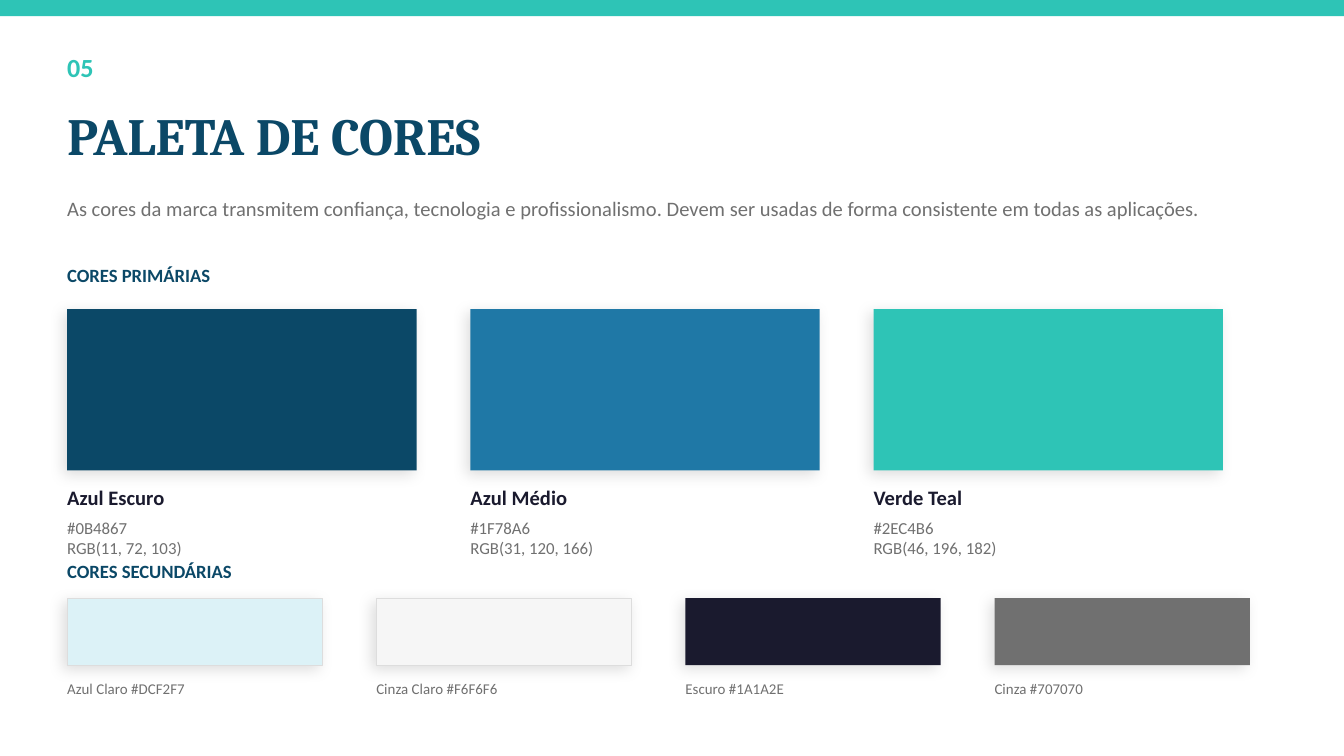
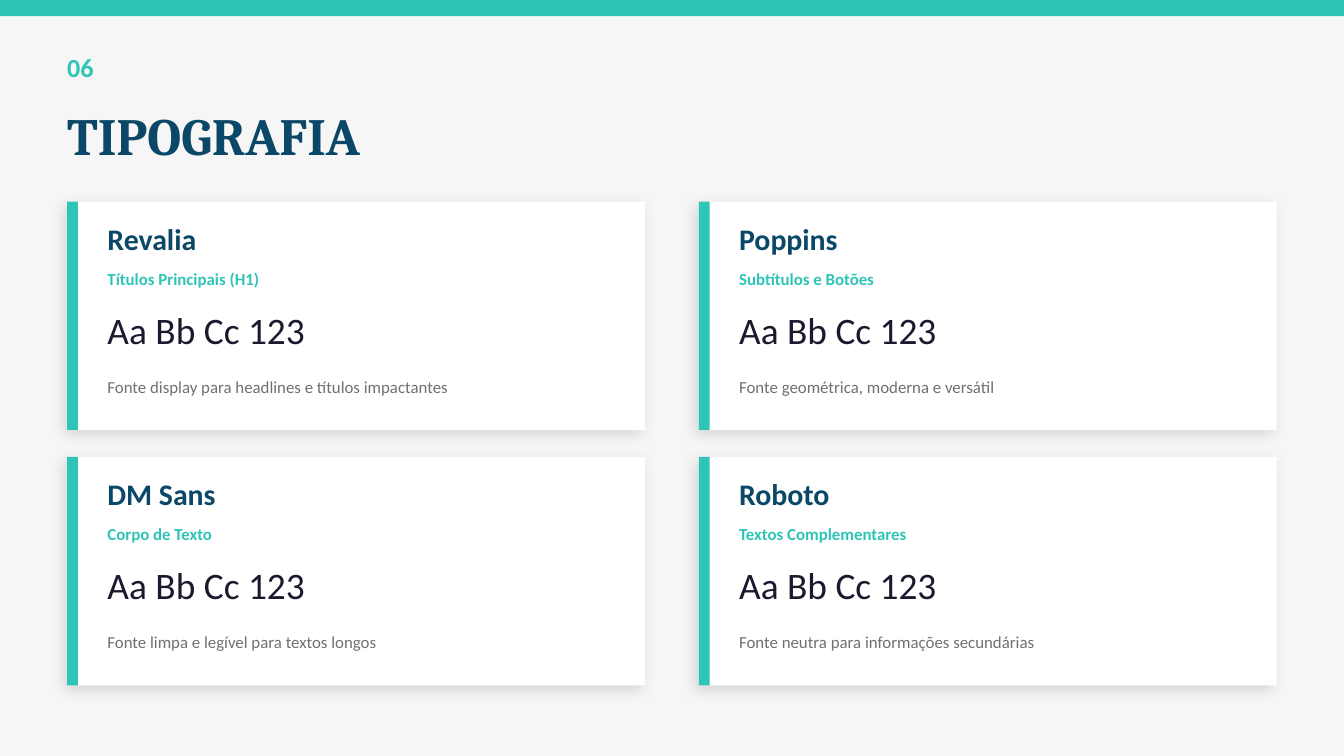
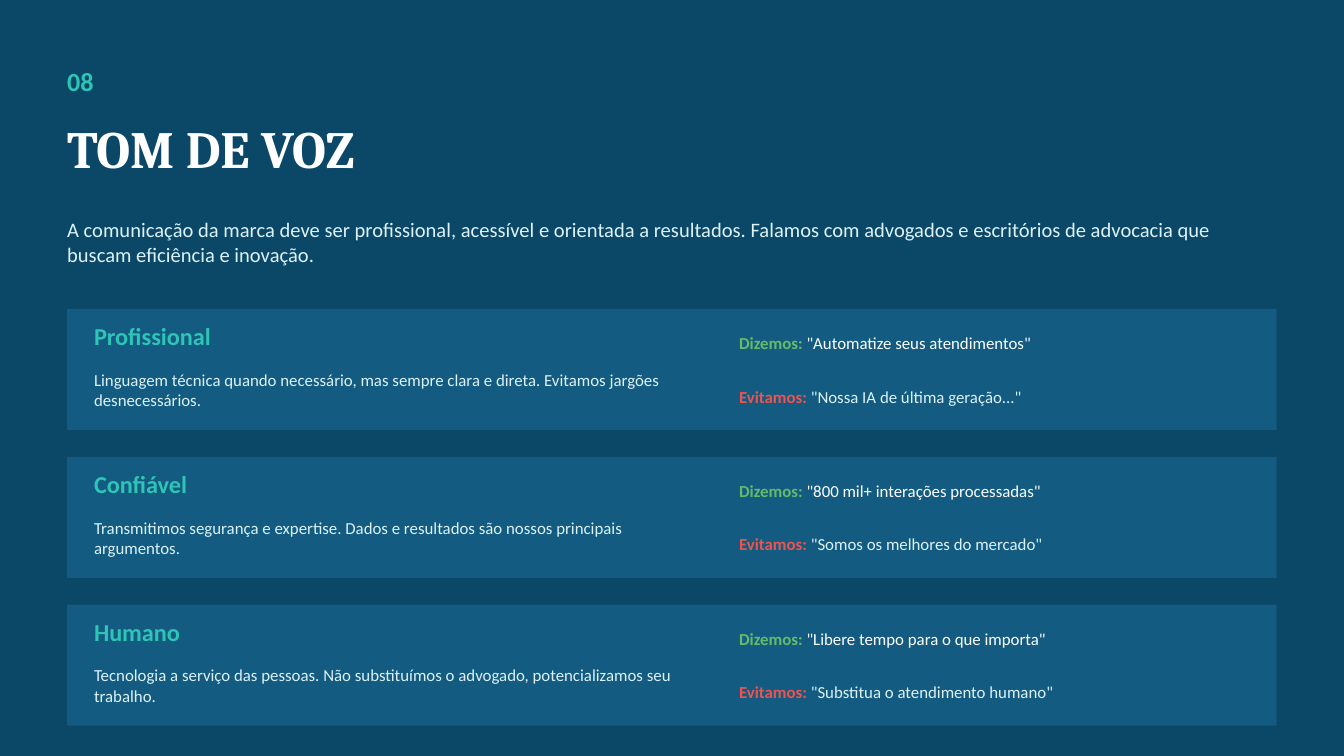
from dataclasses import dataclass, replace

from lxml.etree import SubElement
from pptx import Presentation
from pptx.dml.color import RGBColor
from pptx.enum.shapes import MSO_SHAPE
from pptx.enum.text import MSO_ANCHOR, MSO_AUTO_SIZE, PP_ALIGN
from pptx.oxml.ns import qn
from pptx.shapes.autoshape import Shape
from pptx.slide import Slide
from pptx.text.text import TextFrame, _Run
from pptx.util import Inches, Pt

DARK_BLUE = RGBColor(0x0B, 0x48, 0x67)
MEDIUM_BLUE = RGBColor(0x1F, 0x78, 0xA6)
TEAL = RGBColor(0x2E, 0xC4, 0xB6)
LIGHT_BLUE = RGBColor(0xDC, 0xF2, 0xF7)
LIGHT_GRAY = RGBColor(0xF6, 0xF6, 0xF6)
INK = RGBColor(0x1A, 0x1A, 0x2E)
GRAY = RGBColor(0x70, 0x70, 0x70)
WHITE = RGBColor(0xFF, 0xFF, 0xFF)
BORDER = RGBColor(0xDD, 0xDD, 0xDD)
GREEN = RGBColor(0x66, 0xBB, 0x6A)
RED = RGBColor(0xEF, 0x53, 0x50)

# The slide is 100 grid columns wide; rows are as high as columns are wide.
SLIDE_WIDTH = Inches(10)
SLIDE_HEIGHT = SLIDE_WIDTH * 9 // 16
GRID = SLIDE_WIDTH // 100
MARGIN = 5
CONTENT_WIDTH = 100 - 2 * MARGIN
TITLE_ONLY_LAYOUT = 5


@dataclass(frozen=True)
class Box:
    """A rectangle in grid columns and rows."""
    left: float
    top: float
    width: float
    height: float

    def lengths(self) -> tuple[int, ...]:
        return tuple(round(value * GRID)
                     for value in (self.left, self.top, self.width, self.height))


@dataclass(frozen=True)
class TextStyle:
    size: float
    color: RGBColor
    bold: bool = False
    font: str = "Calibri"


@dataclass(frozen=True)
class Swatch:
    name: str
    color: RGBColor
    border: RGBColor | None = None


@dataclass(frozen=True)
class Typeface:
    name: str
    role: str
    description: str


@dataclass(frozen=True)
class Voice:
    name: str
    description: str
    say: str
    avoid: str


NUMBER = TextStyle(14, TEAL, bold=True)
TITLE = TextStyle(28, DARK_BLUE, bold=True, font="Cambria")
INTRO = TextStyle(11, GRAY)
SECTION = TextStyle(10, DARK_BLUE, bold=True)
SWATCH_NAME = TextStyle(11, INK, bold=True)
DETAIL = TextStyle(9, GRAY)
CAPTION = TextStyle(8, GRAY)
TYPEFACE_NAME = TextStyle(16, DARK_BLUE, bold=True)
TYPEFACE_ROLE = TextStyle(9, TEAL, bold=True)
SAMPLE = TextStyle(20, INK)
VOICE_NAME = TextStyle(13, TEAL, bold=True)
VOICE_TEXT = TextStyle(9, LIGHT_BLUE)

PRIMARY = (
    Swatch("Azul Escuro", DARK_BLUE),
    Swatch("Azul Médio", MEDIUM_BLUE),
    Swatch("Verde Teal", TEAL),
)
SECONDARY = (
    Swatch("Azul Claro", LIGHT_BLUE, BORDER),
    Swatch("Cinza Claro", LIGHT_GRAY, BORDER),
    Swatch("Escuro", INK),
    Swatch("Cinza", GRAY),
)
TYPEFACES = (
    Typeface("Revalia", "Títulos Principais (H1)",
             "Fonte display para headlines e títulos impactantes"),
    Typeface("Poppins", "Subtítulos e Botões", "Fonte geométrica, moderna e versátil"),
    Typeface("DM Sans", "Corpo de Texto", "Fonte limpa e legível para textos longos"),
    Typeface("Roboto", "Textos Complementares",
             "Fonte neutra para informações secundárias"),
)
VOICES = (
    Voice("Profissional",
          "Linguagem técnica quando necessário, mas sempre clara e direta. "
          "Evitamos jargões desnecessários.",
          '"Automatize seus atendimentos"', '"Nossa IA de última geração..."'),
    Voice("Confiável",
          "Transmitimos segurança e expertise. "
          "Dados e resultados são nossos principais argumentos.",
          '"800 mil+ interações processadas"', '"Somos os melhores do mercado"'),
    Voice("Humano",
          "Tecnologia a serviço das pessoas. "
          "Não substituímos o advogado, potencializamos seu trabalho.",
          '"Libere tempo para o que importa"', '"Substitua o atendimento humano"'),
)


def format_run(run: _Run, style: TextStyle) -> None:
    run.font.name = style.font
    run.font.size = Pt(style.size)
    run.font.bold = style.bold
    run.font.color.rgb = style.color


def write(text_frame: TextFrame, text: str, style: TextStyle) -> None:
    text_frame.text = text
    text_frame.word_wrap = True
    text_frame.auto_size = MSO_AUTO_SIZE.NONE
    text_frame.vertical_anchor = MSO_ANCHOR.MIDDLE
    text_frame.margin_left = text_frame.margin_right = 0
    text_frame.margin_top = text_frame.margin_bottom = 0
    for paragraph in text_frame.paragraphs:
        paragraph.alignment = PP_ALIGN.LEFT
        for run in paragraph.runs:
            format_run(run, style)


def add_text(slide: Slide, box: Box, text: str, style: TextStyle) -> Shape:
    text_box = slide.shapes.add_textbox(*box.lengths())
    write(text_box.text_frame, text, style)
    return text_box


def add_labelled_quote(slide: Slide, box: Box, label: str, label_color: RGBColor,
                       quote: str, quote_color: RGBColor) -> None:
    style = replace(VOICE_TEXT, color=label_color, bold=True)
    text_box = add_text(slide, box, f"{label}: ", style)
    run = text_box.text_frame.paragraphs[0].add_run()
    run.text = quote
    format_run(run, replace(VOICE_TEXT, color=quote_color))


def add_rectangle(slide: Slide, box: Box, color: RGBColor,
                  border: RGBColor | None = None) -> Shape:
    shape = slide.shapes.add_shape(MSO_SHAPE.RECTANGLE, *box.lengths())
    shape.shadow.inherit = False
    shape.fill.solid()
    shape.fill.fore_color.rgb = color
    if border is None:
        shape.line.fill.background()
    else:
        shape.line.color.rgb = border
        shape.line.width = Pt(0.5)
    return shape


def add_alpha(color_element, percent: int) -> None:
    SubElement(color_element, qn("a:alpha"), val=str(percent * 1000))


def cast_shadow(shape: Shape) -> None:
    """Give the shape a soft shadow towards the lower left."""
    effects = shape._element.spPr.find(qn("a:effectLst"))
    shadow = SubElement(effects, qn("a:outerShdw"), blurRad=str(Pt(8)), dist=str(Pt(3)),
                        dir=str(135 * 60000), algn="bl", rotWithShape="0")
    add_alpha(SubElement(shadow, qn("a:srgbClr"), val="000000"), 12)


def add_titled_slide(presentation, number: str, title: str, background: RGBColor,
                     title_color: RGBColor = DARK_BLUE, top: float = 3,
                     band: bool = True) -> Slide:
    slide = presentation.slides.add_slide(presentation.slide_layouts[TITLE_ONLY_LAYOUT])
    slide.background.fill.solid()
    slide.background.fill.fore_color.rgb = background
    if band:
        add_rectangle(slide, Box(0, 0, 100, 1.2), TEAL)
    add_text(slide, Box(MARGIN, top, 15, 4), number, NUMBER)
    heading = slide.shapes.title
    heading.left, heading.top, heading.width, heading.height = Box(
        MARGIN, top + 4, 60, 6).lengths()
    write(heading.text_frame, title, replace(TITLE, color=title_color))
    return slide


def add_palette_slide(presentation) -> None:
    slide = add_titled_slide(presentation, "05", "PALETA DE CORES", WHITE)
    add_text(slide, Box(MARGIN, 13, CONTENT_WIDTH, 5),
             "As cores da marca transmitem confiança, tecnologia e profissionalismo. "
             "Devem ser usadas de forma consistente em todas as aplicações.", INTRO)
    gap = 4

    add_text(slide, Box(MARGIN, 19, 40, 3), "CORES PRIMÁRIAS", SECTION)
    width = 26
    for index, swatch in enumerate(PRIMARY):
        left = MARGIN + index * (width + gap)
        cast_shadow(add_rectangle(slide, Box(left, 23, width, 12), swatch.color))
        add_text(slide, Box(left, 35.5, width, 3), swatch.name, SWATCH_NAME)
        add_text(slide, Box(left, 38, width, 4),
                 f"#{swatch.color}\nRGB{tuple(swatch.color)}", DETAIL)

    add_text(slide, Box(MARGIN, 41, 40, 3), "CORES SECUNDÁRIAS", SECTION)
    width = 19
    for index, swatch in enumerate(SECONDARY):
        left = MARGIN + index * (width + gap)
        cast_shadow(add_rectangle(slide, Box(left, 44.5, width, 5),
                                  swatch.color, swatch.border))
        add_text(slide, Box(left, 50, width, 2.5),
                 f"{swatch.name} #{swatch.color}", CAPTION)


def add_typography_slide(presentation) -> None:
    slide = add_titled_slide(presentation, "06", "TIPOGRAFIA", LIGHT_GRAY)
    width, height = 43, 17
    column_gap, row_gap = 4, 2
    for index, typeface in enumerate(TYPEFACES):
        row, column = divmod(index, 2)
        left = MARGIN + column * (width + column_gap)
        top = 15 + row * (height + row_gap)
        cast_shadow(add_rectangle(slide, Box(left, top, width, height), WHITE))
        add_rectangle(slide, Box(left, top, 0.8, height), TEAL)
        lines = (
            (1, 3.5, typeface.name, TYPEFACE_NAME),
            (4.5, 2.5, typeface.role, TYPEFACE_ROLE),
            (7.5, 4, "Aa Bb Cc 123", SAMPLE),
            (12, 3.5, typeface.description, DETAIL),
        )
        for offset, line_height, text, style in lines:
            add_text(slide, Box(left + 3, top + offset, 38, line_height), text, style)


def add_voice_slide(presentation) -> None:
    slide = add_titled_slide(presentation, "08", "TOM DE VOZ", DARK_BLUE,
                             title_color=WHITE, top=4, band=False)
    add_text(slide, Box(MARGIN, 15, CONTENT_WIDTH, 6),
             "A comunicação da marca deve ser profissional, acessível e orientada a "
             "resultados. Falamos com advogados e escritórios de advocacia que buscam "
             "eficiência e inovação.", replace(INTRO, color=LIGHT_BLUE))
    height, gap = 9, 2
    for index, voice in enumerate(VOICES):
        top = 23 + index * (height + gap)
        panel = add_rectangle(slide, Box(MARGIN, top, CONTENT_WIDTH, height), MEDIUM_BLUE)
        add_alpha(panel._element.spPr.find(f"{qn('a:solidFill')}/{qn('a:srgbClr')}"), 40)
        add_text(slide, Box(MARGIN + 2, top + 0.5, 20, 3), voice.name, VOICE_NAME)
        add_text(slide, Box(MARGIN + 2, top + 3.5, 45, 5), voice.description, VOICE_TEXT)
        add_labelled_quote(slide, Box(55, top + 1, 40, 3),
                           "Dizemos", GREEN, voice.say, WHITE)
        add_labelled_quote(slide, Box(55, top + 5, 40, 3),
                           "Evitamos", RED, voice.avoid, LIGHT_BLUE)


def main() -> None:
    presentation = Presentation()
    presentation.slide_width = SLIDE_WIDTH
    presentation.slide_height = SLIDE_HEIGHT
    add_palette_slide(presentation)
    add_typography_slide(presentation)
    add_voice_slide(presentation)
    presentation.save("out.pptx")


if __name__ == "__main__":
    main()
